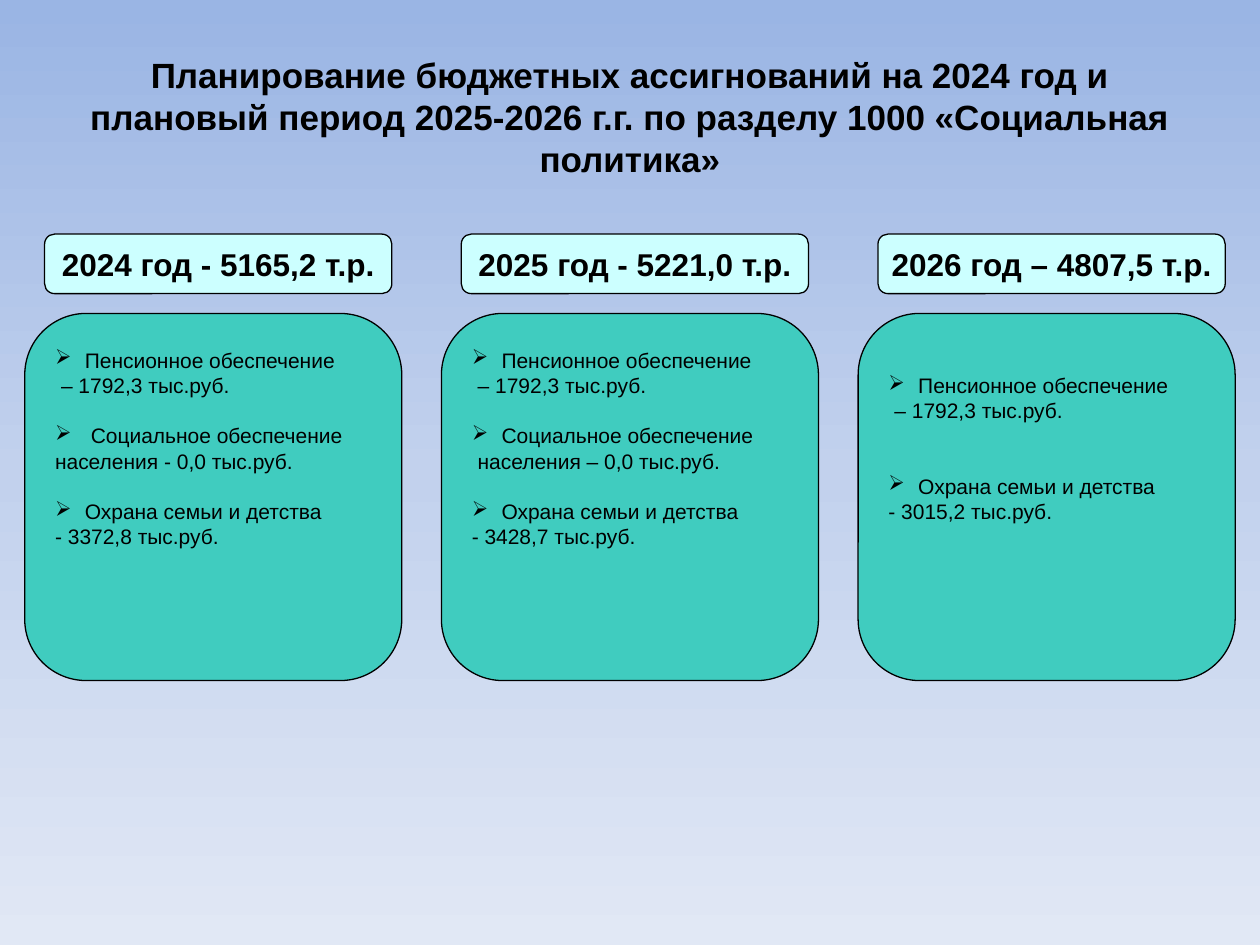
import copy
from dataclasses import dataclass

import pptx
import pptx.dml.color
import pptx.enum.shapes
import pptx.enum.text
import pptx.oxml
import pptx.oxml.ns
import pptx.util
from pptx.util import Cm, Pt


@dataclass(frozen=True)
class Theme:
    font: str = "Arial"
    ink: str = "000000"
    header_fill: str = "CCFFFF"
    body_fill: str = "40CCBF"
    sky: tuple = ("9AB5E4", "C2D1ED", "E1E8F5")
    title_size: int = 20
    header_size: int = 18
    body_size: int = 12
    line_height: float = 14.4
    bullet_indent: float = 0.6
    inset: float = 0.25


THEME = Theme()
PITCH = 8.4  # distance between columns, cm
TITLE = ("Планирование бюджетных ассигнований на 2024 год и плановый период "
         "2025-2026 г.г. по разделу 1000 «Социальная политика»")
PENSION = ("Пенсионное обеспечение", "– 1792,3 тыс.руб.", 0, 0.12)
FAMILY = "Охрана семьи и детства"

# Header, blank lines above the list, blank lines between items, items;
# an item is: name, amount, extra name indent, amount indent (cm)
YEARS = [
    ("2024 год - 5165,2 т.р.", 0, 1, [
        PENSION,
        ("Социальное обеспечение", "населения - 0,0 тыс.руб.", 0.12, 0),
        (FAMILY, "- 3372,8 тыс.руб.", 0, 0)]),
    ("2025 год - 5221,0 т.р.", 0, 1, [
        PENSION,
        ("Социальное обеспечение", "населения – 0,0 тыс.руб.", 0, 0.12),
        (FAMILY, "- 3428,7 тыс.руб.", 0, 0)]),
    ("2026 год – 4807,5 т.р.", 1, 2, [
        PENSION,
        (FAMILY, "- 3015,2 тыс.руб.", 0, 0)]),
]


def rgb(value):
    return pptx.dml.color.RGBColor.from_string(value)


def write(para, text, size, bold=False, centred=False):
    para.text = text
    para.font.name = THEME.font
    para.font.size = Pt(size)
    para.font.bold = bold
    para.font.color.rgb = rgb(THEME.ink)
    align = pptx.enum.text.PP_ALIGN
    para.alignment = align.CENTER if centred else align.LEFT


def indent(para, left, bullet=False):
    props = para._p.get_or_add_pPr()
    props.set("marL", str(Cm(left)))
    props.set("indent", str(Cm(-left if bullet else 0)))
    if bullet:
        mark = pptx.oxml.parse_xml(
            f'<a:buChar {pptx.oxml.ns.nsdecls("a")} char="➢"/>')
        props.append(mark)


def add_card(page, left, top, width, height, fill):
    card = page.shapes.add_shape(
        pptx.enum.shapes.MSO_SHAPE.ROUNDED_RECTANGLE,
        Cm(left), Cm(top), Cm(width), Cm(height))
    card.adjustments[0] = 0.167
    card.shadow.inherit = False
    card.fill.solid()
    card.fill.fore_color.rgb = rgb(fill)
    card.line.color.rgb = rgb(THEME.ink)
    card.line.width = Pt(0.75)
    return card


def paint_background(page):
    fill = page.background.fill
    fill.gradient()
    fill.gradient_angle = 270
    stops = page._element.find(".//" + pptx.oxml.ns.qn("a:gsLst"))
    stops.insert(1, copy.deepcopy(stops[0]))
    for index, (stop, colour) in enumerate(zip(fill.gradient_stops, THEME.sky)):
        stop.position = index / 2
        stop.color.rgb = rgb(colour)


def add_title(page, left, top, width, height):
    box = page.shapes.add_textbox(Cm(left), Cm(top), Cm(width), Cm(height))
    frame = box.text_frame
    frame.word_wrap = True
    frame.vertical_anchor = pptx.enum.text.MSO_ANCHOR.MIDDLE
    write(frame.paragraphs[0], TITLE, THEME.title_size, True, True)


def add_header(page, left, top, width, height, text):
    frame = add_card(page, left, top, width, height, THEME.header_fill).text_frame
    frame.word_wrap = False
    frame.vertical_anchor = pptx.enum.text.MSO_ANCHOR.MIDDLE
    write(frame.paragraphs[0], text, THEME.header_size, True, True)


def add_list(page, left, top, width, height, lines_above, lines_between, items):
    frame = add_card(page, left, top, width, height, THEME.body_fill).text_frame
    frame.word_wrap = True
    frame.vertical_anchor = pptx.enum.text.MSO_ANCHOR.TOP
    frame.margin_left = frame.margin_right = Cm(THEME.inset)
    frame.margin_top = Cm(0.32) + Pt(lines_above * THEME.line_height)
    for index, (name, amount, name_shift, amount_indent) in enumerate(items):
        para = frame.add_paragraph() if index else frame.paragraphs[0]
        write(para, name, THEME.body_size)
        if index:
            para.space_before = Pt(lines_between * THEME.line_height)
        indent(para, THEME.bullet_indent + name_shift, bullet=True)
        para = frame.add_paragraph()
        write(para, amount, THEME.body_size)
        indent(para, amount_indent)


def add_year(page, left, top, year):
    header, lines_above, lines_between, items = year
    add_header(page, left + 0.4, top, 7, 1.2, header)
    add_list(page, left, top + 1.6, 7.6, 7.4, lines_above, lines_between, items)


def main():
    deck = pptx.Presentation()
    deck.slide_width, deck.slide_height = Cm(25.4), Cm(19.05)
    page = deck.slides.add_slide(deck.slide_layouts[6])
    paint_background(page)
    add_title(page, 1.27, 0.76, 22.86, 3.18)
    # One column for each year
    for column, year in enumerate(YEARS):
        add_year(page, 0.5 + column * PITCH, 4.72, year)
    deck.save("out.pptx")


if __name__ == "__main__":
    main()
